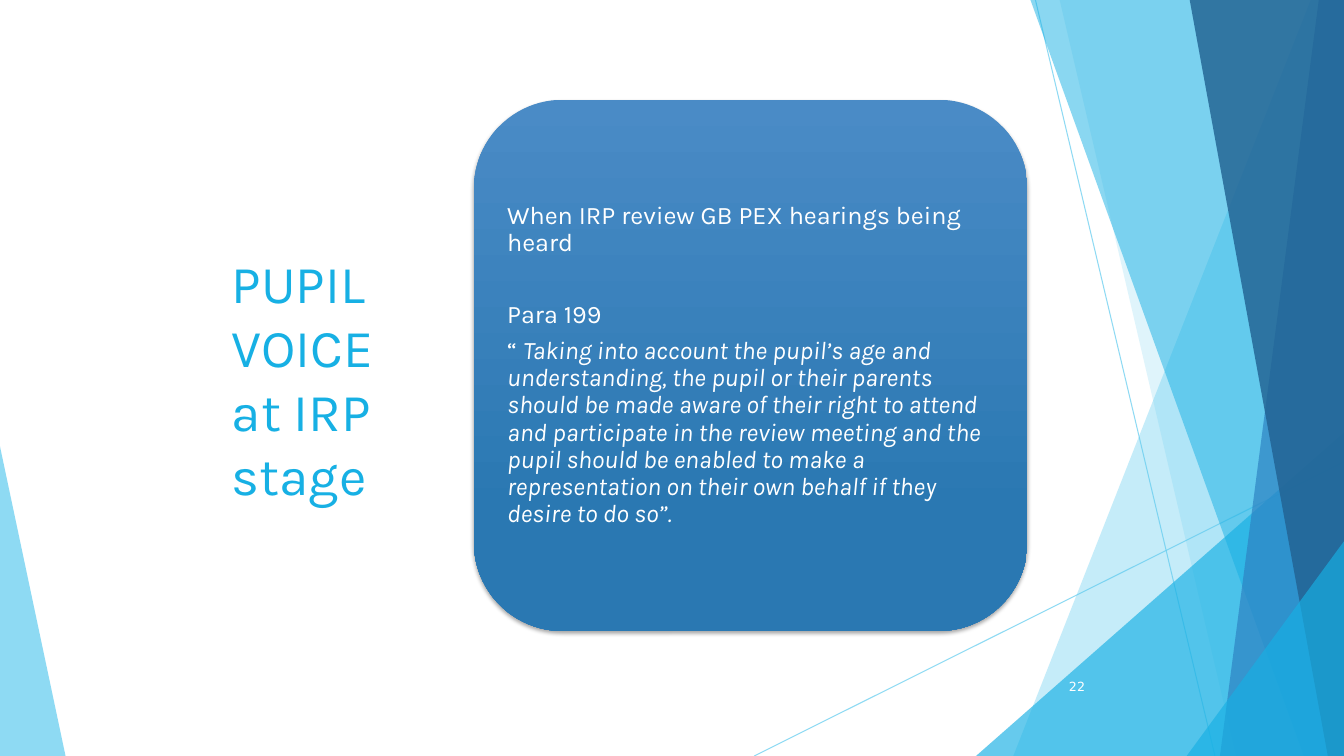
from lxml.etree import SubElement
from pptx import Presentation
from pptx.dml.color import RGBColor
from pptx.enum.shapes import MSO_CONNECTOR, MSO_SHAPE
from pptx.enum.text import MSO_ANCHOR, PP_ALIGN
from pptx.oxml.ns import qn
from pptx.util import Inches, Pt

W, H = 13.33, 7.5
FONT = "Karla"
COLORS = {
    "sky": "5FCBEF", "cyan": "17B0E4", "blue": "2E83C3", "navy": "226292",
    "card_top": "4A8BC6", "card_bottom": "2A78B2",
    "white": "FFFFFF", "black": "000000",
}
# Facets from back to front: corners, colour, opacity in percent
FACETS = [
    ([(0, 4.43), (0.65, H), (0, H)], "sky", 70),
    ([(13, 0), (10.05, H), (W, H), (W, 0)], "sky", 36),
    ([(10.51, 0), (12.26, H), (W, H), (W, 0)], "sky", 20),
    ([(9.68, H), (W, 4.29), (W, H)], "cyan", 66),
    ([(10.22, 0), (12.93, H), (W, H), (W, 0)], "cyan", 50),
    ([(13.08, 0), (12.1, H), (W, H), (W, 0)], "blue", 70),
    ([(11.8, 0), (13.17, H), (W, H), (W, 0)], "navy", 82),
    ([(11.77, H), (W, 5.37), (W, H)], "cyan", 66),
]
RAYS = [((7.48, H), (W, 4.58)), ((10.27, 0), (12.05, H))]
# Card paragraphs: text, italic, space before in points
QUOTE = ("Taking into account the pupil’s age and understanding, the pupil or "
         "their parents should be made aware of their right to attend and "
         "participate in the review meeting and the pupil should be enabled to "
         "make a representation on their own behalf if they desire to do so”.")
CARD_TEXT = [
    ([("When IRP review GB PEX hearings being heard", False)], 0),
    ([("Para 199", False)], 25.5),
    ([("“ ", False), (QUOTE, True)], 0),
]


def rgb(name):
    return RGBColor.from_string(COLORS[name])


def set_opacity(fill_parent, percent):
    color = next(fill_parent.iter(qn("a:srgbClr")))
    SubElement(color, qn("a:alpha")).set("val", str(percent * 1000))


def style_run(r, size, color, font=FONT, italic=False):
    r.font.size, r.font.name, r.font.italic = Pt(size), font, italic
    r.font.color.rgb = rgb(color)


def add_text(slide, box, inset=None):
    tf = slide.shapes.add_textbox(*map(Inches, box)).text_frame
    tf.word_wrap = True
    tf.vertical_anchor = MSO_ANCHOR.MIDDLE
    if inset is not None:
        tf.margin_left = tf.margin_right = Inches(inset)
        tf.margin_top = tf.margin_bottom = Inches(inset)
    return tf


def add_facet(slide, corners, color, opacity):
    points = [(Inches(x), Inches(y)) for x, y in corners]
    builder = slide.shapes.build_freeform(*points[0])
    builder.add_line_segments(points[1:], close=True)
    sp = builder.convert_to_shape()
    sp.shadow.inherit = False
    sp.fill.solid()
    sp.fill.fore_color.rgb = rgb(color)
    set_opacity(sp.fill._xPr, opacity)
    sp.line.fill.background()


def add_ray(slide, start, end):
    line = slide.shapes.add_connector(
        MSO_CONNECTOR.STRAIGHT, *map(Inches, start + end))
    line.line.width = Pt(0.75)
    line.line.color.rgb = rgb("sky")
    props = line._element.spPr
    set_opacity(props, 70)
    SubElement(props, qn("a:effectLst"))


def add_backdrop(slide):
    add_facet(slide, *FACETS[0])
    for start, end in RAYS:
        add_ray(slide, start, end)
    for facet in FACETS[1:]:
        add_facet(slide, *facet)


def add_title(slide, box):
    tf = add_text(slide, box)
    tf.text = "PUPIL VOICE\vat IRP stage"
    for r in tf.paragraphs[0].runs:
        style_run(r, 38, "cyan")


def add_card(slide, box):
    # Rounded panel with a vertical gradient
    left, top, width, height = box
    sp = slide.shapes.add_shape(MSO_SHAPE.ROUNDED_RECTANGLE, *map(Inches, box))
    sp.line.fill.background()
    sp.fill.gradient()
    sp.fill.gradient_angle = 270
    stops = [(0, "card_top"), (0.78, "card_bottom")]
    for stop, (position, color) in zip(sp.fill.gradient_stops, stops):
        stop.position = position
        stop.color.rgb = rgb(color)

    # Soft shadow below the panel
    sp.shadow.inherit = False
    effects = sp._element.spPr.find(qn("a:effectLst"))
    shadow = SubElement(effects, qn("a:outerShdw"), blurRad=str(Pt(3)),
                        dist=str(Pt(2)), dir="5400000", rotWithShape="0")
    SubElement(shadow, qn("a:srgbClr"), val=COLORS["black"])
    set_opacity(shadow, 35)

    # Text sits inside the rounded corners
    pad = 0.26
    tf = add_text(slide, (left + pad, top + pad, width - 2 * pad,
                          height - 2 * pad), inset=0.07)
    for i, (runs, before) in enumerate(CARD_TEXT):
        p = tf.add_paragraph() if i else tf.paragraphs[0]
        p.line_spacing = 0.9
        p.space_before, p.space_after = Pt(before), Pt(6.3)
        for text, italic in runs:
            r = p.add_run()
            r.text = text
            style_run(r, 18, "white", italic=italic)


def add_page_number(slide, box):
    tf = add_text(slide, box)
    tf.text = "22"
    p = tf.paragraphs[0]
    p.alignment = PP_ALIGN.RIGHT
    p.space_after = Pt(6)
    style_run(p.runs[0], 9, "white", font="DejaVu Sans")


def main():
    prs = Presentation()
    prs.slide_width, prs.slide_height = Inches(W), Inches(H)
    slide = prs.slides.add_slide(prs.slide_layouts[6])
    add_backdrop(slide)
    add_title(slide, (2.2, 1.51, 2.91, 4.48))
    add_card(slide, (4.7, 0.99, 5.49, 5.27))
    add_page_number(slide, (10.3, 6.61, 0.56, 0.4))
    prs.save("out.pptx")


if __name__ == "__main__":
    main()
